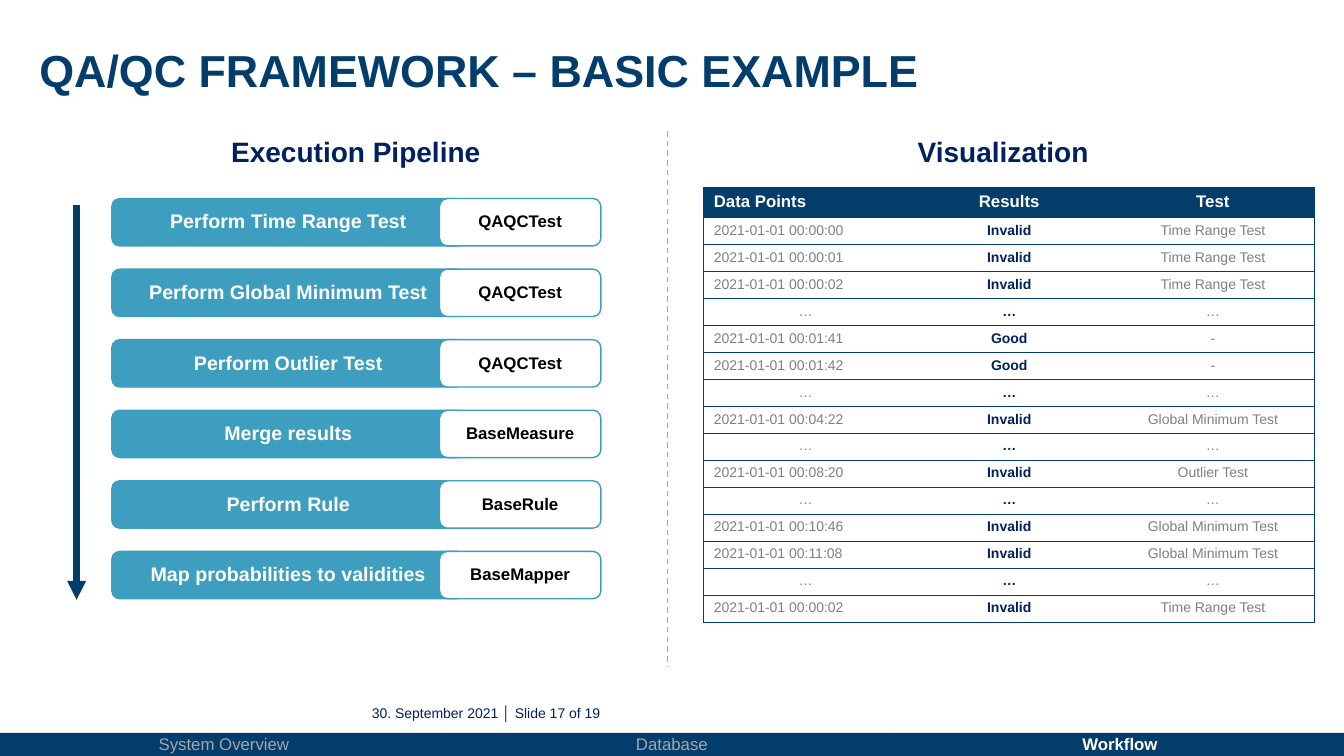
from pptx import Presentation
from pptx.util import Inches, Pt
from pptx.dml.color import RGBColor
from pptx.enum.dml import MSO_LINE
from pptx.enum.shapes import MSO_CONNECTOR, MSO_SHAPE
from pptx.enum.text import MSO_ANCHOR, PP_ALIGN
from pptx.oxml.ns import qn
from lxml.etree import SubElement

NAVY = RGBColor(0x02, 0x3D, 0x6B)
INK = RGBColor(0x00, 0x20, 0x60)
TEAL = RGBColor(0x3E, 0x9E, 0xBF)
GRAY = RGBColor(0x80, 0x80, 0x80)
SILVER = RGBColor(0xA6, 0xA6, 0xA6)
WHITE = RGBColor(0xFF, 0xFF, 0xFF)
BLACK = RGBColor(0, 0, 0)

TITLE = "QA/QC FRAMEWORK – BASIC EXAMPLE"
DATE = "30. September 2021 │ Slide 17 of 19"
STEPS = [
    ("Perform Time Range Test", "QAQCTest"),
    ("Perform Global Minimum Test", "QAQCTest"),
    ("Perform Outlier Test", "QAQCTest"),
    ("Merge results", "BaseMeasure"),
    ("Perform Rule", "BaseRule"),
    ("Map probabilities to validities", "BaseMapper"),
]
GAP = ("…", "…", "…")
ROWS = [
    ("Data Points", "Results", "Test"),
    ("2021-01-01 00:00:00", "Invalid", "Time Range Test"),
    ("2021-01-01 00:00:01", "Invalid", "Time Range Test"),
    ("2021-01-01 00:00:02", "Invalid", "Time Range Test"),
    GAP,
    ("2021-01-01 00:01:41", "Good", "-"),
    ("2021-01-01 00:01:42", "Good", "-"),
    GAP,
    ("2021-01-01 00:04:22", "Invalid", "Global Minimum Test"),
    GAP,
    ("2021-01-01 00:08:20", "Invalid", "Outlier Test"),
    GAP,
    ("2021-01-01 00:10:46", "Invalid", "Global Minimum Test"),
    ("2021-01-01 00:11:08", "Invalid", "Global Minimum Test"),
    GAP,
    ("2021-01-01 00:00:02", "Invalid", "Time Range Test"),
]
TABS = ["System Overview", "Database", "Workflow"]
ACTIVE = "Workflow"

deck = Presentation()
deck.slide_width, deck.slide_height = Inches(13.33), Inches(7.5)
slide = deck.slides.add_slide(deck.slide_layouts[5])
shapes = slide.shapes


def write(frame, text, size, color, bold=False, align=PP_ALIGN.CENTER, space=0.95):
    para = frame.paragraphs[0]
    para.alignment = align
    para.line_spacing = space
    run = para.add_run()
    run.text = text
    font = run.font
    font.name, font.size, font.bold = "Arial", Pt(size), bold
    font.color.rgb = color


def label(x, y, w, h, text, **style):
    frame = shapes.add_textbox(Inches(x), Inches(y), Inches(w), Inches(h)).text_frame
    frame.word_wrap = True
    write(frame, text, **style)


def block(kind, x, y, w, h, fill, edge, text, **style):
    shape = shapes.add_shape(kind, Inches(x), Inches(y), Inches(w), Inches(h))
    shape.shadow.inherit = False
    shape.fill.solid()
    shape.fill.fore_color.rgb = fill
    if edge is None:
        shape.line.fill.background()
    else:
        shape.line.color.rgb = edge
        shape.line.width = Pt(1)
    shape.text_frame.vertical_anchor = MSO_ANCHOR.MIDDLE
    write(shape.text_frame, text, **style)


def upright(x, top, end, color, width):
    """Draw a vertical line and return it."""
    line = shapes.add_connector(MSO_CONNECTOR.STRAIGHT, Inches(x), Inches(top),
                                Inches(x), Inches(end))
    line.line.color.rgb = color
    line.line.width = Pt(width)
    SubElement(line._element.spPr, qn("a:effectLst"))
    return line


def border(cell, sides):
    """Rule the given sides of a cell and clear the others."""
    props = cell._tc.get_or_add_tcPr()
    for spot, side in enumerate("LRTB"):
        edge = props.makeelement(qn("a:ln" + side), {"w": str(Pt(0.5))})
        props.insert(spot, edge)
        if side in sides:
            fill = SubElement(edge, qn("a:solidFill"))
            SubElement(fill, qn("a:srgbClr"), val=str(NAVY))
        else:
            SubElement(edge, qn("a:noFill"))


title = shapes.title
title.left, title.top = Inches(0.39), Inches(0.35)
title.width, title.height = Inches(8.79), Inches(0.56)
frame = title.text_frame
frame.margin_left = frame.margin_right = frame.margin_top = frame.margin_bottom = 0
frame.vertical_anchor = MSO_ANCHOR.TOP
write(frame, TITLE, 32, NAVY, bold=True, align=PP_ALIGN.LEFT, space=1.14)

upright(6.62, 1.3, 6.62, SILVER, 1).line.dash_style = MSO_LINE.DASH
label(1.11, 1.31, 4.84, 0.42, "Execution Pipeline", size=20, color=INK, bold=True)
label(7.3, 1.31, 5.3, 0.42, "Visualization", size=20, color=INK, bold=True)

for i, (step, base) in enumerate(STEPS):
    y = 1.97 + 0.7 * i
    block(MSO_SHAPE.ROUNDED_RECTANGLE, 1.11, y, 3.5, 0.47, TEAL, TEAL, step,
          size=14, color=WHITE, bold=True)
    block(MSO_SHAPE.ROUNDED_RECTANGLE, 4.36, y, 1.6, 0.47, WHITE, TEAL, base,
          size=12, color=BLACK, bold=True)

arrow = upright(0.76, 2.03, 5.95, NAVY, 4.5)
SubElement(arrow.line._get_or_add_ln(), qn("a:tailEnd"), type="triangle")

holder = shapes.add_table(len(ROWS), 3, Inches(6.98), Inches(1.86),
                          Inches(6.06), Inches(4.3))
table = holder.table
table.first_row = table.horz_banding = False
for r, row in enumerate(ROWS):
    head = r == 0
    table.rows[r].height = Inches(0.28 if head else 0.24)
    for c, text in enumerate(row):
        cell = table.cell(r, c)
        cell.fill.solid()
        cell.fill.fore_color.rgb = NAVY if head else WHITE
        left = c == 0 and row is not GAP
        write(cell.text_frame, text, 12 if head else 10,
              WHITE if head else INK if c == 1 else GRAY, bold=head or c == 1,
              align=PP_ALIGN.LEFT if left else PP_ALIGN.CENTER, space=1.0)
        border(cell, "TB" + ("L", "", "R")[c])
holder.height = Inches(4.3)

wide = 13.33 / len(TABS)
for i, tab in enumerate(TABS):
    live = tab == ACTIVE
    block(MSO_SHAPE.RECTANGLE, i * wide, 7.27, wide, 0.23, NAVY, None, tab,
          size=12, color=WHITE if live else SILVER, bold=live)

label(3.54, 6.95, 2.56, 0.26, DATE, size=10, color=INK)

deck.save("out.pptx")
